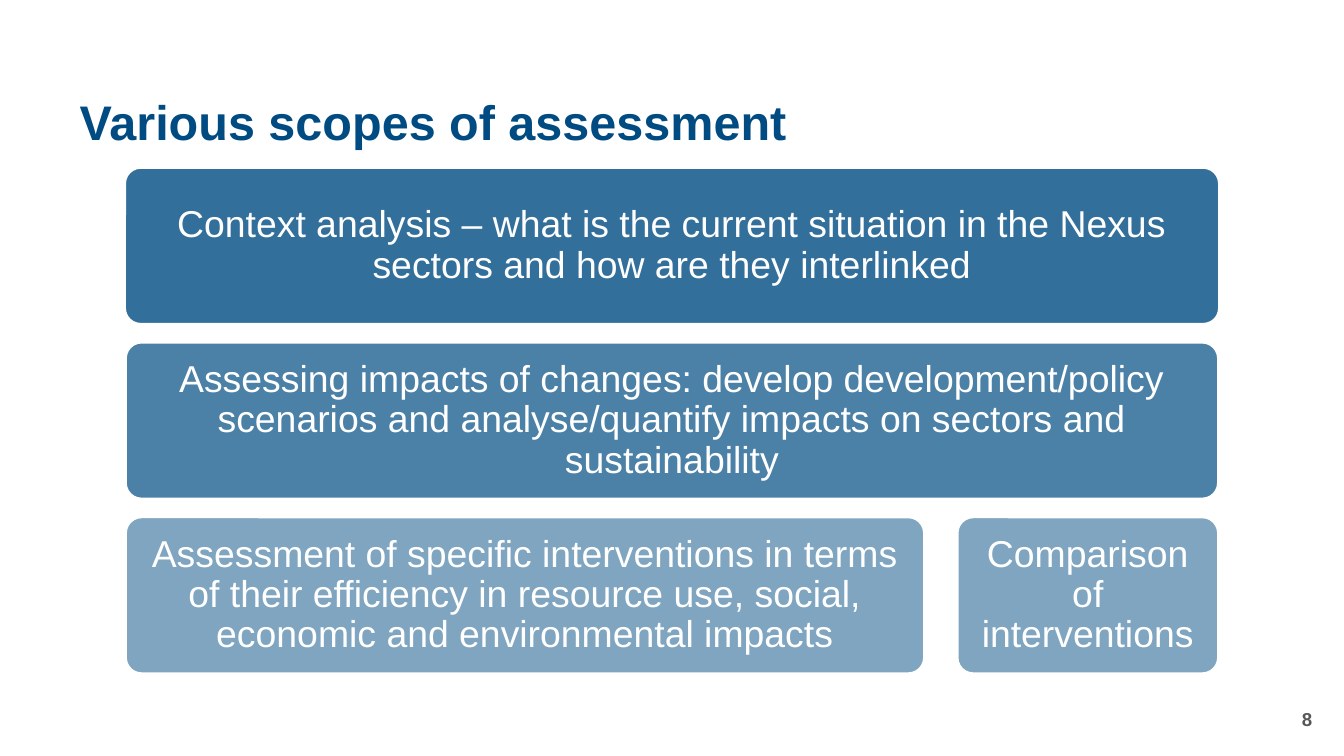
from dataclasses import dataclass
from typing import Any

from lxml.etree import SubElement
from pptx import Presentation
from pptx.dml.color import RGBColor
from pptx.enum.shapes import MSO_SHAPE
from pptx.enum.text import MSO_ANCHOR, MSO_AUTO_SIZE, PP_ALIGN
from pptx.oxml.ns import qn
from pptx.util import Pt


@dataclass(frozen=True)
class Theme:
    font: str = "Arial"
    blue: RGBColor = RGBColor(0x00, 0x4C, 0x82)
    grey: RGBColor = RGBColor(0x57, 0x57, 0x56)
    white: RGBColor = RGBColor(0xFF, 0xFF, 0xFF)
    title: int = 26
    body: int = 20
    small: int = 10


@dataclass(frozen=True)
class Card:
    row: int
    left: float
    width: float
    alpha: int
    text: str


THEME = Theme()
TOP, STEP, HEIGHT = 90, 93.6, 83.5
CARDS = [
    Card(0, 67, 586, 80, "Context analysis – what is the current situation "
         "in the Nexus sectors and how are they interlinked"),
    Card(1, 67.5, 585, 70, "Assessing impacts of changes: develop "
         "development/policy scenarios and analyse/quantify impacts on "
         "sectors and sustainability"),
    Card(2, 67.5, 427.5, 50, "Assessment of specific interventions in terms "
         "of their efficiency in resource use, social, economic and "
         "environmental impacts"),
    Card(2, 513, 139.5, 50, "Comparison of interventions"),
]


def write(shape: Any, text: str, size: int, color: RGBColor,
          align: PP_ALIGN, bold: bool = False, lead: float = 1.0) -> None:
    frame = shape.text_frame
    frame.word_wrap = True
    frame.auto_size = MSO_AUTO_SIZE.NONE
    frame.vertical_anchor = MSO_ANCHOR.MIDDLE
    para = frame.paragraphs[0]
    para.alignment = align
    para.line_spacing = lead
    para.space_before = Pt(0)
    run = para.add_run()
    run.text = text
    font = run.font
    font.name, font.size, font.bold = THEME.font, Pt(size), bold
    font.color.rgb = color


def draw_card(slide: Any, card: Card) -> None:
    box = slide.shapes.add_shape(
        MSO_SHAPE.ROUNDED_RECTANGLE, Pt(card.left),
        Pt(TOP + card.row * STEP), Pt(card.width), Pt(HEIGHT))
    box.adjustments[0] = 0.1
    box.shadow.inherit = False
    box.fill.solid()
    box.fill.fore_color.rgb = THEME.blue
    tint = box.fill._xPr.find(qn("a:solidFill"))[0]
    SubElement(tint, qn("a:alpha"), val=str(card.alpha * 1000))
    box.line.color.rgb = THEME.white
    box.line.width = Pt(1)
    frame = box.text_frame
    frame.margin_left = frame.margin_right = Pt(6)
    frame.margin_top = frame.margin_bottom = Pt(6)
    write(box, card.text, THEME.body, THEME.white, PP_ALIGN.CENTER, lead=0.9)


def main() -> None:
    deck = Presentation()
    deck.slide_width, deck.slide_height = Pt(720), Pt(405)
    slide = deck.slides.add_slide(deck.slide_layouts[5])

    title = slide.shapes.title
    title.left, title.top = Pt(35.5), Pt(45.5)
    title.width, title.height = Pt(674.5), Pt(42.5)
    write(title, "Various scopes of assessment", THEME.title, THEME.blue,
          PP_ALIGN.LEFT, bold=True, lead=0.9)

    for card in CARDS:
        draw_card(slide, card)

    page = slide.shapes.add_textbox(Pt(548), Pt(374.5), Pt(162), Pt(21.5))
    write(page, "8", THEME.small, THEME.grey, PP_ALIGN.RIGHT, bold=True)
    deck.save("out.pptx")


if __name__ == "__main__":
    main()
